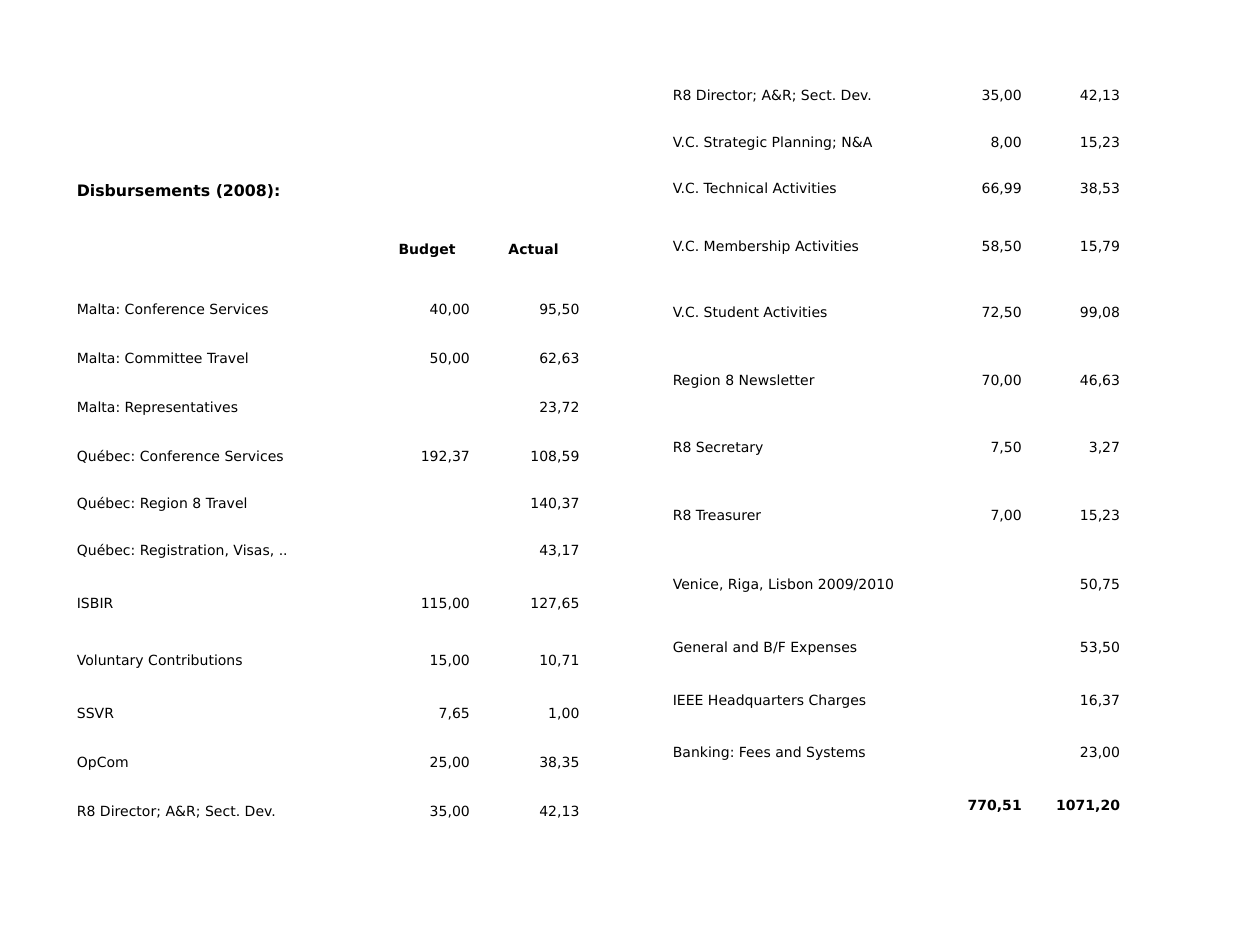
from pptx import Presentation
from pptx.dml.color import RGBColor
from pptx.enum.text import MSO_ANCHOR, PP_ALIGN
from pptx.util import Inches, Pt

LEFT, CENTER, RIGHT = PP_ALIGN.LEFT, PP_ALIGN.CENTER, PP_ALIGN.RIGHT
TOP, MIDDLE = MSO_ANCHOR.TOP, MSO_ANCHOR.MIDDLE
BLACK = RGBColor(0x00, 0x00, 0x00)
FONT = "DejaVu Sans"

FIRST_ITEMS = [
    ("Malta: Conference Services", "40,00", "95,50"),
    ("Malta: Committee Travel", "50,00", "62,63"),
    ("Malta: Representatives", "", "23,72"),
    ("Québec: Conference Services", "192,37", "108,59"),
    ("Québec: Region 8 Travel", "", "140,37"),
    ("Québec: Registration, Visas, ..", "", "43,17"),
    ("ISBIR", "115,00", "127,65"),
    ("Voluntary Contributions", "15,00", "10,71"),
    ("SSVR", "7,65", "1,00"),
    ("OpCom", "25,00", "38,35"),
    ("R8 Director; A&R; Sect. Dev.", "35,00", "42,13"),
]
SECOND_ITEMS = [
    ("R8 Director; A&R; Sect. Dev.", "35,00", "42,13"),
    ("V.C. Strategic Planning; N&A", "8,00", "15,23"),
    ("V.C. Technical Activities", "66,99", "38,53"),
    ("V.C. Membership Activities", "58,50", "15,79"),
    ("V.C. Student Activities", "72,50", "99,08"),
    ("Region 8 Newsletter", "70,00", "46,63"),
    ("R8 Secretary", "7,50", "3,27"),
    ("R8 Treasurer", "7,00", "15,23"),
    ("Venice, Riga, Lisbon 2009/2010", "", "50,75"),
    ("General and B/F Expenses", "", "53,50"),
    ("IEEE Headquarters Charges", "", "16,37"),
    ("Banking: Fees and Systems", "", "23,00"),
]
TOTALS = ("", "770,51", "1071,20")
FIRST_HEIGHTS = [0.39, 0.55] + [0.39] * 4 + [0.36, 0.39, 0.45, 0.45] + [0.39] * 3
SECOND_HEIGHTS = [0.38, 0.36, 0.38, 0.53, 0.53, 0.54, 0.52,
                  0.56, 0.55, 0.45, 0.38, 0.45, 1.5]


def add_plain_table(s, left, top, widths, heights):
    frame = s.shapes.add_table(len(heights), len(widths), Inches(left), Inches(top),
                               Inches(sum(widths)), Inches(sum(heights)))
    table = frame.table
    table.first_row = table.horz_banding = False
    for column, width in zip(table.columns, widths):
        column.width = Inches(width)
    for row, height in zip(table.rows, heights):
        row.height = Inches(height)
    for cell in table.iter_cells():
        cell.fill.background()
        cell.margin_left = cell.margin_right = Inches(0.07)
        cell.margin_top = cell.margin_bottom = 0
        cell.vertical_anchor = MIDDLE
    return table


def write_cell(cell, text, align=LEFT, size=8, bold=False):
    if not text:
        return
    p = cell.text_frame.paragraphs[0]
    p.alignment = align
    r = p.add_run()
    r.text = text
    r.font.name = FONT
    r.font.size = Pt(size)
    r.font.bold = bold
    r.font.color.rgb = BLACK


def write_items(table, items, first_row=0):
    for i, item in enumerate(items, first_row):
        for j, text in enumerate(item):
            write_cell(table.cell(i, j), text, RIGHT if j else LEFT)


def write_headings(table):
    table.cell(0, 0).merge(table.cell(0, 2))
    write_cell(table.cell(0, 0), "Disbursements (2008):", size=9, bold=True)
    for j, text in enumerate(("Budget", "Actual"), 1):
        cell = table.cell(1, j)
        write_cell(cell, text, CENTER, bold=True)
        cell.text_frame.paragraphs[0].space_after = Pt(14)


def write_totals(table, row):
    for j, text in enumerate(TOTALS):
        cell = table.cell(row, j)
        cell.vertical_anchor = TOP
        cell.margin_top = Inches(0.13)
        write_cell(cell, text, RIGHT, bold=True)


def main():
    prs = Presentation()
    prs.slide_width, prs.slide_height = Inches(10), Inches(7.5)
    s = prs.slides.add_slide(prs.slide_layouts[6])

    first = add_plain_table(s, 0.54, 1.32, [2.44, 0.82, 0.87], FIRST_HEIGHTS)
    write_headings(first)
    write_items(first, FIRST_ITEMS, first_row=2)

    second = add_plain_table(s, 5.27, 0.57, [2.18, 0.73, 0.78], SECOND_HEIGHTS)
    write_items(second, SECOND_ITEMS)
    write_totals(second, len(SECOND_ITEMS))

    prs.save("out.pptx")


if __name__ == "__main__":
    main()
